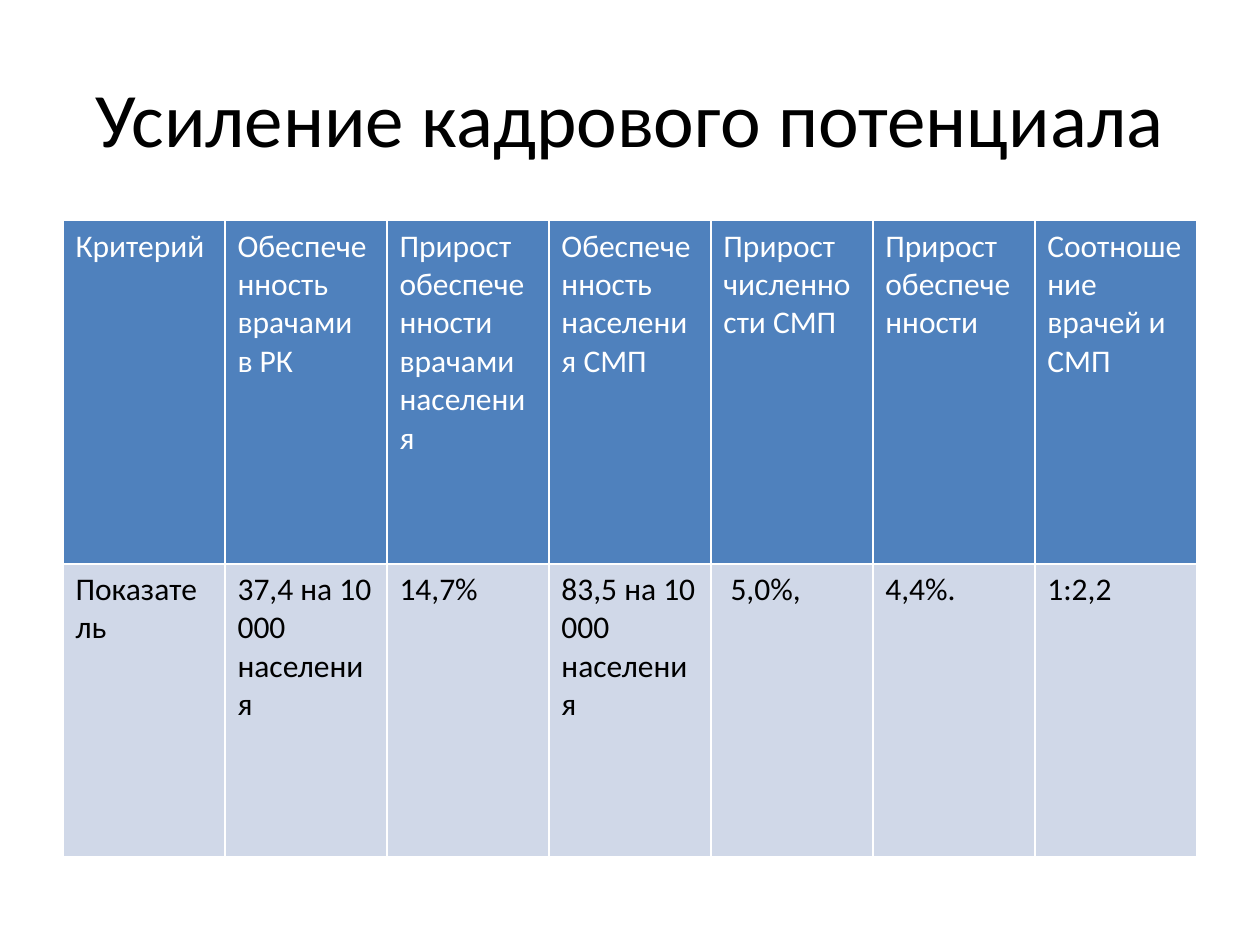
from dataclasses import dataclass

from lxml import etree
from pptx import Presentation
from pptx import util as u
from pptx.dml import color
from pptx.enum import text
from pptx.oxml import ns


@dataclass(frozen=True)
class Theme:
    font: str = "Calibri"
    title_size: int = 44
    table_size: int = 18
    ink: str = "000000"
    light: str = "FFFFFF"
    header_fill: str = "4F81BD"
    body_fill: str = "D0D8E8"
    border_width: int = 1


@dataclass(frozen=True)
class Box:
    left: float
    top: float
    width: float
    height: float

    def lengths(self):
        return [u.Cm(value) for value in (self.left, self.top, self.width, self.height)]


THEME = Theme()
TITLE = "Усиление кадрового потенциала"
COLUMNS = [
    ("Критерий", "Показатель"),
    ("Обеспеченность врачами в РК", "37,4 на 10 000 населения"),
    ("Прирост обеспеченности врачами населения", "14,7%"),
    ("Обеспеченность населения СМП", "83,5 на 10 000 населения"),
    ("Прирост численности СМП", " 5,0%,"),
    ("Прирост обеспеченности", "4,4%."),
    ("Соотношение врачей и СМП", "1:2,2"),
]
HEADER_SHARE = 0.54


def write_text(frame, content, size, ink, align=text.PP_ALIGN.LEFT):
    frame.word_wrap = True
    paragraph = frame.paragraphs[0]
    paragraph.alignment = align
    run = paragraph.add_run()
    run.text = content
    run.font.name = THEME.font
    run.font.size = u.Pt(size)
    run.font.bold = False
    run.font.color.rgb = color.RGBColor.from_string(ink)


def add_borders(cell):
    properties = cell._tc.get_or_add_tcPr()
    for side in ("lnL", "lnR", "lnT", "lnB"):
        line = etree.SubElement(
            properties, ns.qn(f"a:{side}"), w=str(u.Pt(THEME.border_width))
        )
        fill = etree.SubElement(line, ns.qn("a:solidFill"))
        etree.SubElement(fill, ns.qn("a:srgbClr"), val=THEME.light)


def format_cell(cell, content, fill, ink):
    add_borders(cell)
    cell.fill.solid()
    cell.fill.fore_color.rgb = color.RGBColor.from_string(fill)
    write_text(cell.text_frame, content, size=THEME.table_size, ink=ink)


def add_title(slide, box):
    frame = slide.shapes.add_textbox(*box.lengths()).text_frame
    frame.vertical_anchor = text.MSO_ANCHOR.MIDDLE
    write_text(
        frame, TITLE, size=THEME.title_size, ink=THEME.ink, align=text.PP_ALIGN.CENTER
    )


def add_indicator_table(slide, box):
    table = slide.shapes.add_table(2, len(COLUMNS), *box.lengths()).table
    header_height = box.height * HEADER_SHARE
    table.rows[0].height = u.Cm(header_height)
    table.rows[1].height = u.Cm(box.height - header_height)
    for index, (criterion, value) in enumerate(COLUMNS):
        table.columns[index].width = u.Cm(box.width / len(COLUMNS))
        format_cell(table.cell(0, index), criterion, THEME.header_fill, THEME.light)
        format_cell(table.cell(1, index), value, THEME.body_fill, THEME.ink)


def main():
    presentation = Presentation()
    presentation.slide_width = u.Cm(25.4)
    presentation.slide_height = u.Cm(19.05)
    slide = presentation.slides.add_slide(presentation.slide_layouts[6])
    add_title(slide, Box(1.27, 0.76, 22.86, 3.18))
    add_indicator_table(slide, Box(1.27, 4.45, 22.86, 12.82))
    presentation.save("out.pptx")


if __name__ == "__main__":
    main()
